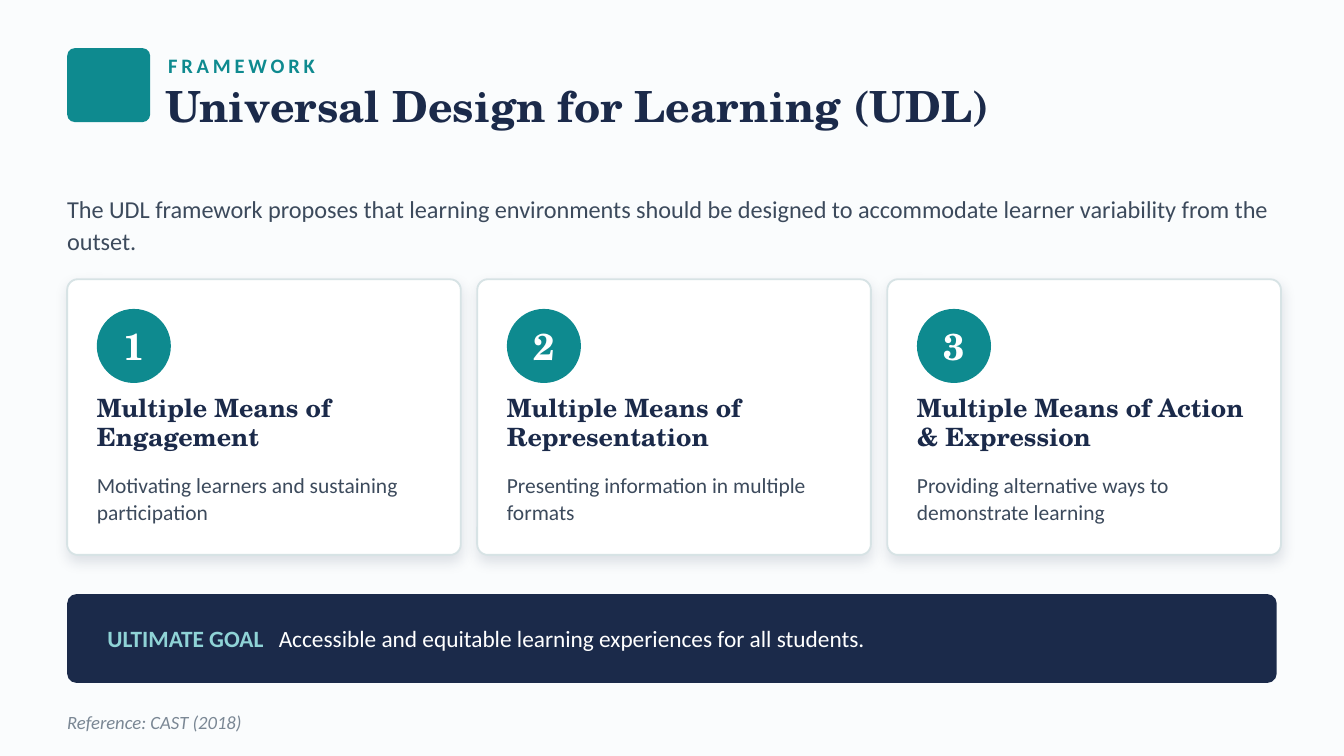
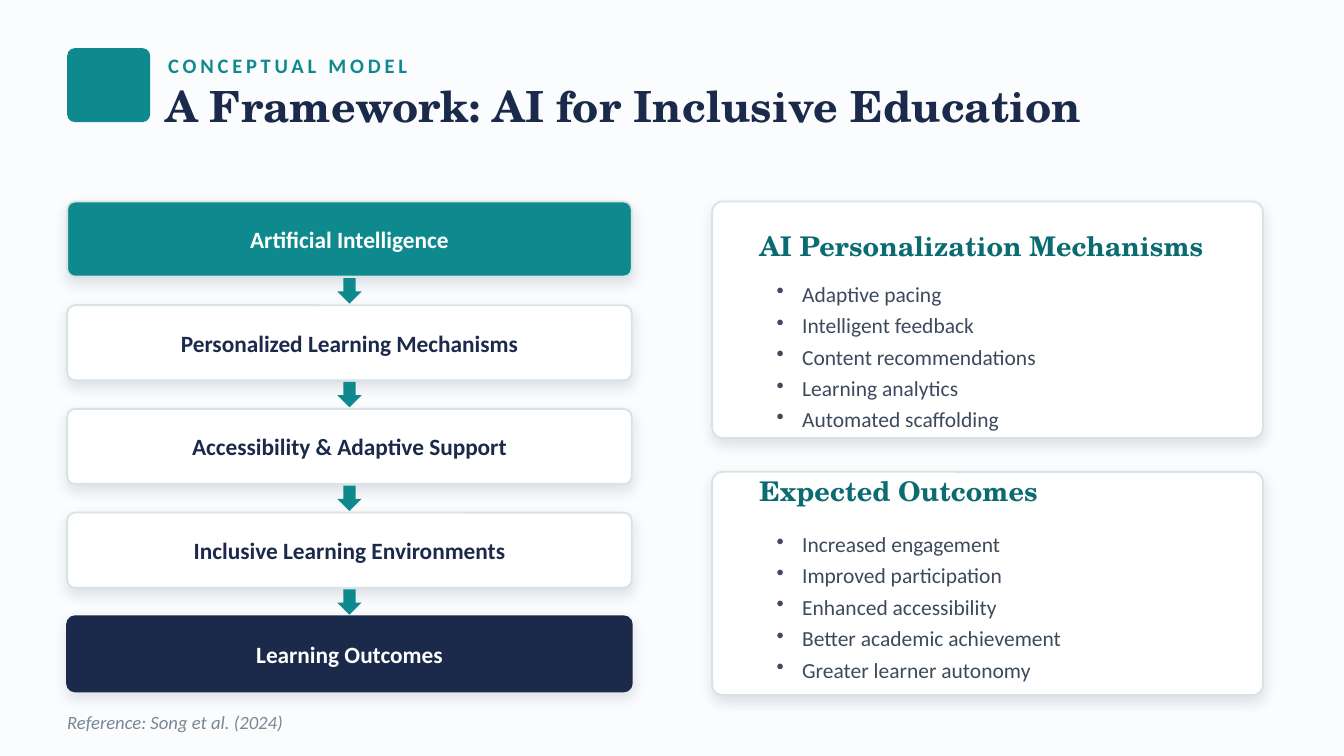
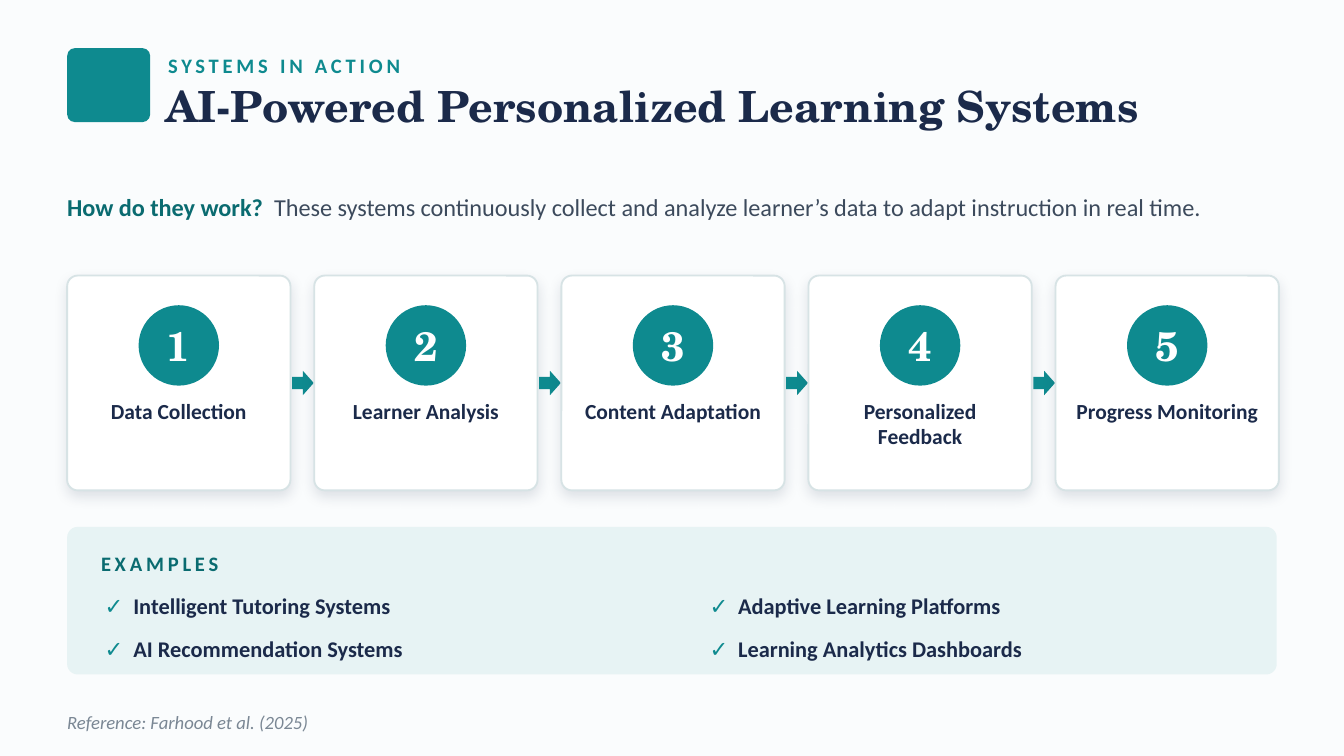
from lxml.etree import SubElement
from pptx import Presentation
from pptx.dml.color import RGBColor
from pptx.enum.shapes import MSO_SHAPE as Shape
from pptx.enum.text import MSO_ANCHOR as Anchor, PP_ALIGN as Align
from pptx.oxml.ns import qn
from pptx.util import Cm, Pt

COLORS = {
    "page": "FAFCFD", "white": "FFFFFF", "teal": "0E8A8F", "deep_teal": "0A6B70",
    "mint": "8FD3D6", "pale": "E7F3F4", "border": "D7E3E5", "navy": "1B2A4A",
    "body": "3C4A5C", "muted": "7A8794",
}
SANS, SERIF = "Calibri", "TeX Gyre Schola"
LEFT, FULL_WIDTH = 1.27, 22.86
CARD_RADIUS, SMALL_RADIUS = 0.2, 0.15


def color(name):
    return RGBColor.from_string(COLORS[name])


# ---- Text ----
def write(frame, paragraphs, size=12, font=SANS, ink="body", bold=False, italic=False,
          align=Align.LEFT, anchor=Anchor.TOP, insets=(0, 0), line=None, after=None,
          tracking=None, bullet=False, tab=None):
    """Fill a frame; a paragraph is a string or a list of (text, ink, bold)."""
    frame.word_wrap = True
    frame.vertical_anchor = anchor
    frame.margin_left = frame.margin_right = Cm(insets[0])
    frame.margin_top = frame.margin_bottom = Cm(insets[1])
    if isinstance(paragraphs, str):
        paragraphs = [paragraphs]
    for index, content in enumerate(paragraphs):
        para = frame.add_paragraph() if index else frame.paragraphs[0]
        properties = para._p.get_or_add_pPr()
        if bullet:
            properties.set("marL", str(Cm(0.48)))
            properties.set("indent", str(-Cm(0.48)))
            SubElement(properties, qn("a:buChar"), char="•")
        if tab:
            stops = SubElement(properties, qn("a:tabLst"))
            SubElement(stops, qn("a:tab"), pos=str(Cm(tab)), algn="l")
        para.alignment = align
        if line:
            para.line_spacing = line
        if after:
            para.space_after = Pt(after)
        spans = [(content, ink, bold)] if isinstance(content, str) else content
        for text, span_ink, span_bold in spans:
            span = para.add_run()
            span.text = text
            span.font.name, span.font.size = font, Pt(size)
            span.font.bold, span.font.italic = span_bold, italic
            span.font.color.rgb = color(span_ink)
            if tracking:
                span._r.get_or_add_rPr().set("spc", str(tracking * 100))


def add_text(page, place, paragraphs, **look):
    box = page.shapes.add_textbox(*map(Cm, place))
    write(box.text_frame, paragraphs, **look)


# ---- Shapes ----
def add_form(page, kind, place, fill, border=None):
    form = page.shapes.add_shape(kind, *map(Cm, place))
    form.shadow.inherit = False
    form.fill.solid()
    form.fill.fore_color.rgb = color(fill)
    if border:
        form.line.color.rgb = color(border)
        form.line.width = Pt(1)
    else:
        form.line.fill.background()
    return form


def add_panel(page, place, fill, radius, border=None):
    panel = add_form(page, Shape.ROUNDED_RECTANGLE, place, fill, border)
    panel.adjustments[0] = radius / min(place[2:])
    return panel


def add_card(page, place, fill="white", border="border", radius=CARD_RADIUS):
    """Rounded panel with a border and a soft shadow below."""
    card = add_panel(page, place, fill, radius, border)
    effects = card._element.spPr.find(qn("a:effectLst"))
    shadow = SubElement(effects, qn("a:outerShdw"), blurRad=str(Pt(7)), dist=str(Pt(3)),
                        dir="5400000", algn="ctr", rotWithShape="0")
    tint = SubElement(shadow, qn("a:srgbClr"), val=COLORS["navy"])
    SubElement(tint, qn("a:alpha"), val="12000")


def add_number(page, left, top, diameter, number, size):
    circle = add_form(page, Shape.OVAL, (left, top, diameter, diameter), "teal")
    write(circle.text_frame, str(number), size=size, font=SERIF, ink="white", bold=True,
          align=Align.CENTER, anchor=Anchor.MIDDLE)


# ---- Shared page frame ----
def add_page(deck, kicker, title, reference):
    page = deck.slides.add_slide(deck.slide_layouts[6])
    page.background.fill.solid()
    page.background.fill.fore_color.rgb = color("page")
    add_panel(page, (LEFT, 0.91, 1.57, 1.4), "teal", SMALL_RADIUS)
    add_text(page, (3.18, 0.91, 19.81, 0.66), kicker, size=11, ink="teal", bold=True,
             anchor=Anchor.MIDDLE, tracking=2)
    add_text(page, (3.12, 1.57, 21.59, 1.98), title, size=23, font=SERIF, ink="navy",
             bold=True, line=0.95)
    add_text(page, (LEFT, 13.26, 18.54, 0.76), reference, size=10, ink="muted",
             italic=True, anchor=Anchor.MIDDLE)
    return page


# ---- Slide 1: three principles ----
def add_principle(page, left, number, heading, detail):
    top, inset, text_width = 5.28, 0.56, 6.32
    add_card(page, (left, top, 7.44, 5.21))
    add_number(page, left + inset, top + inset, 1.4, number, 20)
    add_text(page, (left + inset, 7.44, text_width, 1.52), heading, size=13.5,
             font=SERIF, ink="navy", bold=True, line=0.98)
    add_text(page, (left + inset, 8.89, text_width, 1.4), detail, size=11.5, line=1.05)


def build_principles(deck):
    page = add_page(deck, "FRAMEWORK", "Universal Design for Learning (UDL)",
                    "Reference: CAST (2018)")
    add_text(page, (LEFT, 3.61, FULL_WIDTH, 1.27),
             "The UDL framework proposes that learning environments should be designed "
             "to accommodate learner variability from the outset.", size=13, line=1.1)
    principles = [
        ("Multiple Means of Engagement", "Motivating learners and sustaining participation"),
        ("Multiple Means of Representation", "Presenting information in multiple formats"),
        ("Multiple Means of Action & Expression",
         "Providing alternative ways to demonstrate learning"),
    ]
    for index, (heading, detail) in enumerate(principles):
        add_principle(page, LEFT + index * 7.75, index + 1, heading, detail)
    # Goal band
    add_panel(page, (LEFT, 11.23, FULL_WIDTH, 1.68), "navy", 0.18)
    goal = [("ULTIMATE GOAL\t", "mint", True),
            ("Accessible and equitable learning experiences for all students.", "white", False)]
    add_text(page, (2.03, 11.23, 21.34, 1.68), [goal], size=12.5,
             anchor=Anchor.MIDDLE, tab=3.24)


# ---- Slide 2: flow and lists ----
def add_flow(page, steps):
    top, pitch, width, height = 3.81, 1.96, 10.67, 1.42
    arrow_width = 0.46
    for index, (label, fill, border, ink) in enumerate(steps):
        step_top = top + index * pitch
        if index:
            add_form(page, Shape.DOWN_ARROW,
                     (LEFT + (width - arrow_width) / 2, step_top - 0.51, arrow_width, 0.48),
                     "teal")
        add_card(page, (LEFT, step_top, width, height), fill, border, SMALL_RADIUS)
        add_text(page, (LEFT + 0.38, step_top, width - 0.76, height), label, size=12.5,
                 ink=ink, bold=True, align=Align.CENTER, anchor=Anchor.MIDDLE)


def add_list_card(page, top, height, heading_top, list_top, list_height, heading, items):
    add_card(page, (13.46, top, 10.41, height))
    add_text(page, (14.35, heading_top, 9.14, 0.86), heading, size=14.5, font=SERIF,
             ink="deep_teal", bold=True, anchor=Anchor.MIDDLE)
    add_text(page, (14.43, list_top, 9.14, list_height), items, size=11.5,
             insets=(0.25, 0.13), after=3, bullet=True)


def build_model(deck):
    page = add_page(deck, "CONCEPTUAL MODEL", "A Framework: AI for Inclusive Education",
                    "Reference: Song et al. (2024)")
    add_flow(page, [
        ("Artificial Intelligence", "teal", "border", "white"),
        ("Personalized Learning Mechanisms", "white", "border", "navy"),
        ("Accessibility & Adaptive Support", "white", "border", "navy"),
        ("Inclusive Learning Environments", "white", "border", "navy"),
        ("Learning Outcomes", "navy", "navy", "white"),
    ])
    add_list_card(page, 3.81, 4.47, 4.22, 5.18, 2.64, "AI Personalization Mechanisms", [
        "Adaptive pacing", "Intelligent feedback", "Content recommendations",
        "Learning analytics", "Automated scaffolding"])
    add_list_card(page, 8.92, 4.22, 8.84, 9.91, 2.29, "Expected Outcomes", [
        "Increased engagement", "Improved participation", "Enhanced accessibility",
        "Better academic achievement", "Greater learner autonomy"])


# ---- Slide 3: process and examples ----
def add_process(page, stages):
    top, pitch, width, diameter = 5.21, 4.67, 4.22, 1.52
    for index, label in enumerate(stages):
        left = LEFT + index * pitch
        add_card(page, (left, top, width, 4.06))
        add_number(page, left + (width - diameter) / 2, top + 0.56, diameter, index + 1, 22)
        add_text(page, (left + 0.25, 7.54, width - 0.5, 1.52), label, size=11.5,
                 ink="navy", bold=True, align=Align.CENTER, line=0.98)
        if index < len(stages) - 1:
            add_form(page, Shape.RIGHT_ARROW, (left + width + 0.03, 7.01, 0.41, 0.46), "teal")


def add_examples(page, examples):
    add_panel(page, (LEFT, 9.96, FULL_WIDTH, 2.79), "pale", CARD_RADIUS)
    add_text(page, (1.91, 10.29, 7.62, 0.71), "EXAMPLES", size=11, ink="deep_teal",
             bold=True, anchor=Anchor.MIDDLE, tracking=2)
    for index, example in enumerate(examples):
        row, column = divmod(index, 2)
        add_text(page, (1.98 + column * 11.43, 11.07 + row * 0.81, 11.18, 0.76),
                 [[("✓\t", "teal", True), (example, "navy", True)]],
                 size=12, anchor=Anchor.MIDDLE, tab=0.54)


def build_systems(deck):
    page = add_page(deck, "SYSTEMS IN ACTION", "AI-Powered Personalized Learning Systems",
                    "Reference: Farhood et al. (2025)")
    answer = [("How do they work?\t", "deep_teal", True),
              ("These systems continuously collect and analyze learner’s data to adapt "
               "instruction in real time.", "body", False)]
    add_text(page, (LEFT, 3.61, FULL_WIDTH, 1.02), [answer], size=13, line=1.05, tab=3.91)
    add_process(page, ["Data Collection", "Learner Analysis", "Content Adaptation",
                       "Personalized Feedback", "Progress Monitoring"])
    add_examples(page, ["Intelligent Tutoring Systems", "Adaptive Learning Platforms",
                        "AI Recommendation Systems", "Learning Analytics Dashboards"])


def main():
    deck = Presentation()
    deck.slide_width, deck.slide_height = Cm(25.4), Cm(14.29)
    build_principles(deck)
    build_model(deck)
    build_systems(deck)
    deck.save("out.pptx")


if __name__ == "__main__":
    main()
